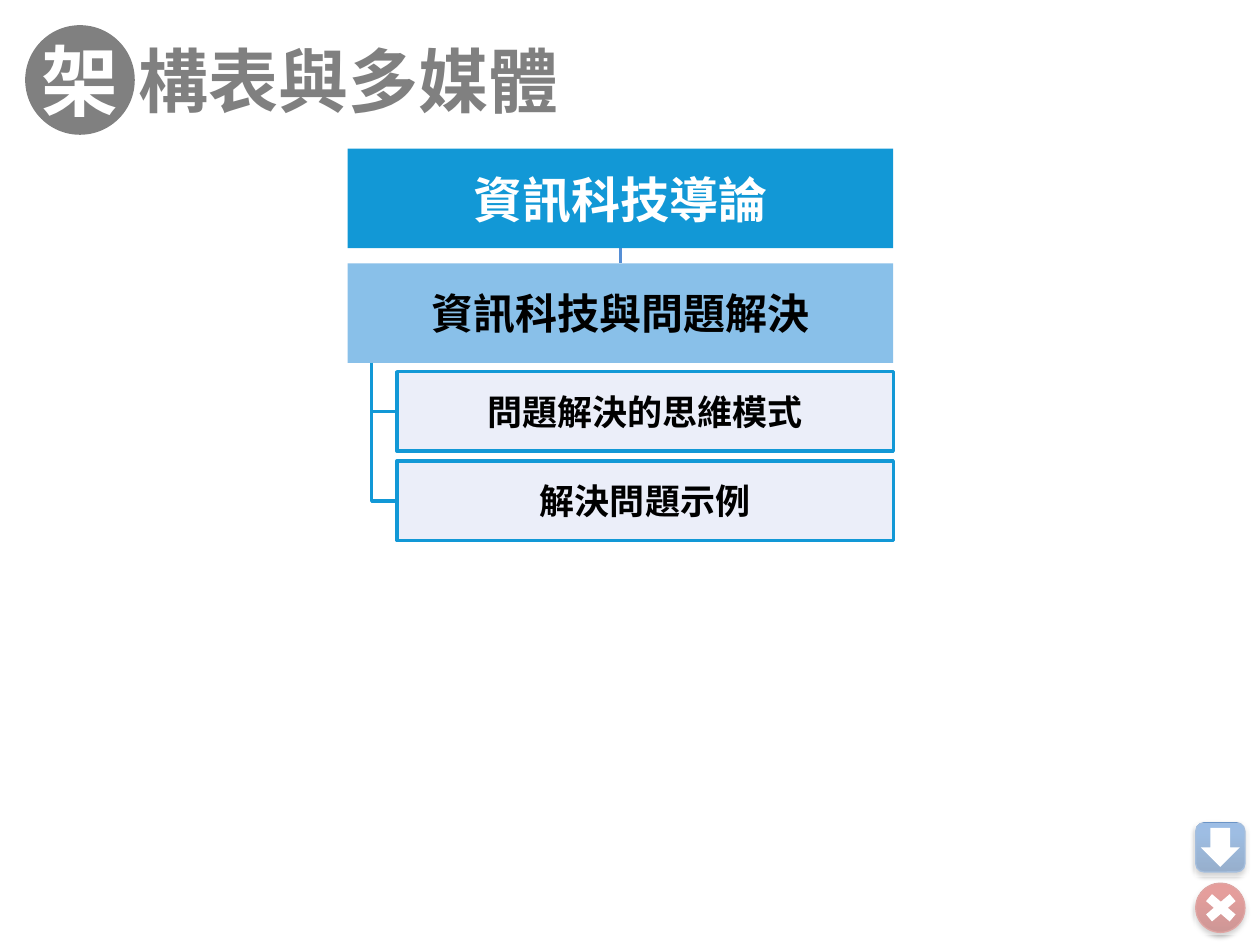
from copy import deepcopy
from dataclasses import dataclass

from lxml import etree
from pptx import Presentation
from pptx.dml.color import RGBColor
from pptx.enum.shapes import MSO_CONNECTOR, MSO_SHAPE
from pptx.enum.text import MSO_ANCHOR, PP_ALIGN
from pptx.oxml import parse_xml
from pptx.oxml.ns import nsdecls, qn
from pptx.util import Inches, Pt

RECT, OVAL = MSO_SHAPE.RECTANGLE, MSO_SHAPE.OVAL
ROUNDED, DOWN, CROSS = MSO_SHAPE.ROUNDED_RECTANGLE, MSO_SHAPE.DOWN_ARROW, MSO_SHAPE.MATH_MULTIPLY
STRAIGHT = MSO_CONNECTOR.STRAIGHT
MIDDLE, CENTER, LEFT = MSO_ANCHOR.MIDDLE, PP_ALIGN.CENTER, PP_ALIGN.LEFT


@dataclass(frozen=True)
class Theme:
    white: str = "FFFFFF"
    black: str = "000000"
    grey: str = "808080"
    blue: str = "1298D6"
    light_blue: str = "89C0E9"
    pale: str = "EBEEF9"
    link: str = "558ED5"
    next_stops: tuple = ("2F5F99", "3D7CC7", "3A7CCB")
    next_line: str = "4B7EBC"
    close_stops: tuple = ("9C2F2D", "CB3E3A", "CE3B37")
    close_line: str = "BF4C48"
    cjk: str = "Noto Sans CJK SC"
    serif: str = "Times New Roman"
    sans: str = "Roboto"
    initial: int = 44
    title: int = 40
    root: int = 28
    branch: int = 24
    leaf: int = 20
    rule: float = 2
    thin: float = 0.75


T = Theme()


def rgb(color):
    return RGBColor.from_string(color)


def set_line(sp, color, width):
    sp.line.color.rgb = rgb(color)
    sp.line.width = Pt(width)


def add_box(s, kind, box, fill=None, line=None, width=T.rule):
    sp = s.shapes.add_shape(kind, *map(Inches, box))
    sp.shadow.inherit = False
    if fill:
        sp.fill.solid()
        sp.fill.fore_color.rgb = rgb(fill)
    if line:
        set_line(sp, line, width)
    else:
        sp.line.fill.background()
    return sp


def set_text(sp, text, size, font, color, align=CENTER, wrap=False, insets=(0.04, 0.04)):
    tf = sp.text_frame
    tf.text = text
    tf.word_wrap = wrap
    tf.vertical_anchor = MIDDLE
    tf.margin_left = tf.margin_right = Inches(insets[0])
    tf.margin_top = tf.margin_bottom = Inches(insets[1])
    p = tf.paragraphs[0]
    p.alignment = align
    r = p.runs[0]
    r.font.size, r.font.bold, r.font.name = Pt(size), True, font
    r.font.color.rgb = rgb(color)
    # East Asian glyphs take their own font
    ea = etree.SubElement(r.font._element, qn("a:ea"))
    ea.set("typeface", T.cjk)


def add_elbow(s, x, top, right, y):
    builder = s.shapes.build_freeform(Inches(x), Inches(top))
    builder.add_line_segments([(Inches(x), Inches(y)), (Inches(right), Inches(y))], close=False)
    sp = builder.convert_to_shape()
    sp.shadow.inherit = False
    sp.fill.background()
    set_line(sp, T.blue, T.rule)


def add_link(s, x, top, bottom):
    c = s.shapes.add_connector(STRAIGHT, Inches(x), Inches(top), Inches(x), Inches(bottom))
    set_line(c, T.link, T.rule)
    etree.SubElement(c._element.spPr, qn("a:effectLst"))


def set_gradient(sp, colors):
    sp.fill.gradient()
    sp.fill.gradient_angle = 90
    stops = sp._element.spPr.find(".//" + qn("a:gsLst"))
    stops.append(deepcopy(stops[-1]))
    for stop, position, color in zip(sp.fill.gradient_stops, (0, 0.8, 1), colors):
        stop.position = position
        stop.color.rgb = rgb(color)


def add_drop_shadow(sp):
    shadow = parse_xml(
        f'<a:outerShdw {nsdecls("a")} blurRad="{Pt(3.1)}" dist="{Pt(1.8)}" dir="5400000" rotWithShape="0">'
        '<a:srgbClr val="000000"><a:alpha val="35000"/></a:srgbClr></a:outerShdw>')
    sp._element.spPr.find(qn("a:effectLst")).append(shadow)


def add_button(s, kind, top, stops, line, symbol, symbol_box):
    sp = add_box(s, kind, (9.49, top, 0.39, 0.39), line=line, width=T.thin)
    set_gradient(sp, stops)
    add_drop_shadow(sp)
    add_box(s, symbol, symbol_box, T.white)


def add_veil(s, top):
    sp = add_box(s, RECT, (9.48, top, 0.43, 0.43), T.white)
    color = sp._element.spPr.find(qn("a:solidFill"))[0]
    etree.SubElement(color, qn("a:alpha")).set("val", "50000")


def add_title(s):
    sp = add_box(s, OVAL, (0.2, 0.2, 0.87, 0.87), T.grey)
    set_text(sp, "架", T.initial, T.cjk, T.white)
    sp = s.shapes.add_textbox(*map(Inches, (0.98, 0.2, 3.94, 0.87)))
    set_text(sp, "構表與多媒體", T.title, T.cjk, T.grey, LEFT, True, (0.12, 0.04))


def add_chart_tree(s):
    left, width, height = 2.76, 4.33, 0.79
    root_top, branch_top = 1.18, 2.09
    leaf_left, leaf_top, leaf_height, pitch = 3.15, 2.95, 0.63, 0.71

    # Root and branch
    sp = add_box(s, RECT, (left, branch_top, width, height), T.light_blue)
    set_text(sp, "資訊科技與問題解決", T.branch, T.serif, T.black)
    add_link(s, left + width / 2, root_top + height, branch_top)
    sp = add_box(s, RECT, (left, root_top, width, height), T.blue)
    set_text(sp, "資訊科技導論", T.root, T.cjk, T.white)

    # Leaves, each with its elbow
    for i, text in enumerate(("問題解決的思維模式", "解決問題示例")):
        top = leaf_top + i * pitch
        add_elbow(s, 2.95, branch_top + height, leaf_left, top + leaf_height / 2)
        sp = add_box(s, RECT, (leaf_left, top, left + width - leaf_left, leaf_height), T.pale, T.blue)
        set_text(sp, text, T.leaf, T.sans, T.black)


def main():
    prs = Presentation()
    prs.slide_width, prs.slide_height = Inches(10), Inches(7.5)
    s = prs.slides.add_slide(prs.slide_layouts[6])

    # Faded navigation buttons
    add_button(s, ROUNDED, 6.53, T.next_stops, T.next_line, DOWN, (9.53, 6.57, 0.31, 0.31))
    add_button(s, OVAL, 7.01, T.close_stops, T.close_line, CROSS, (9.51, 7.05, 0.36, 0.31))
    for top in (6.53, 6.99):
        add_veil(s, top)

    add_title(s)
    add_chart_tree(s)
    prs.save("out.pptx")


if __name__ == "__main__":
    main()
